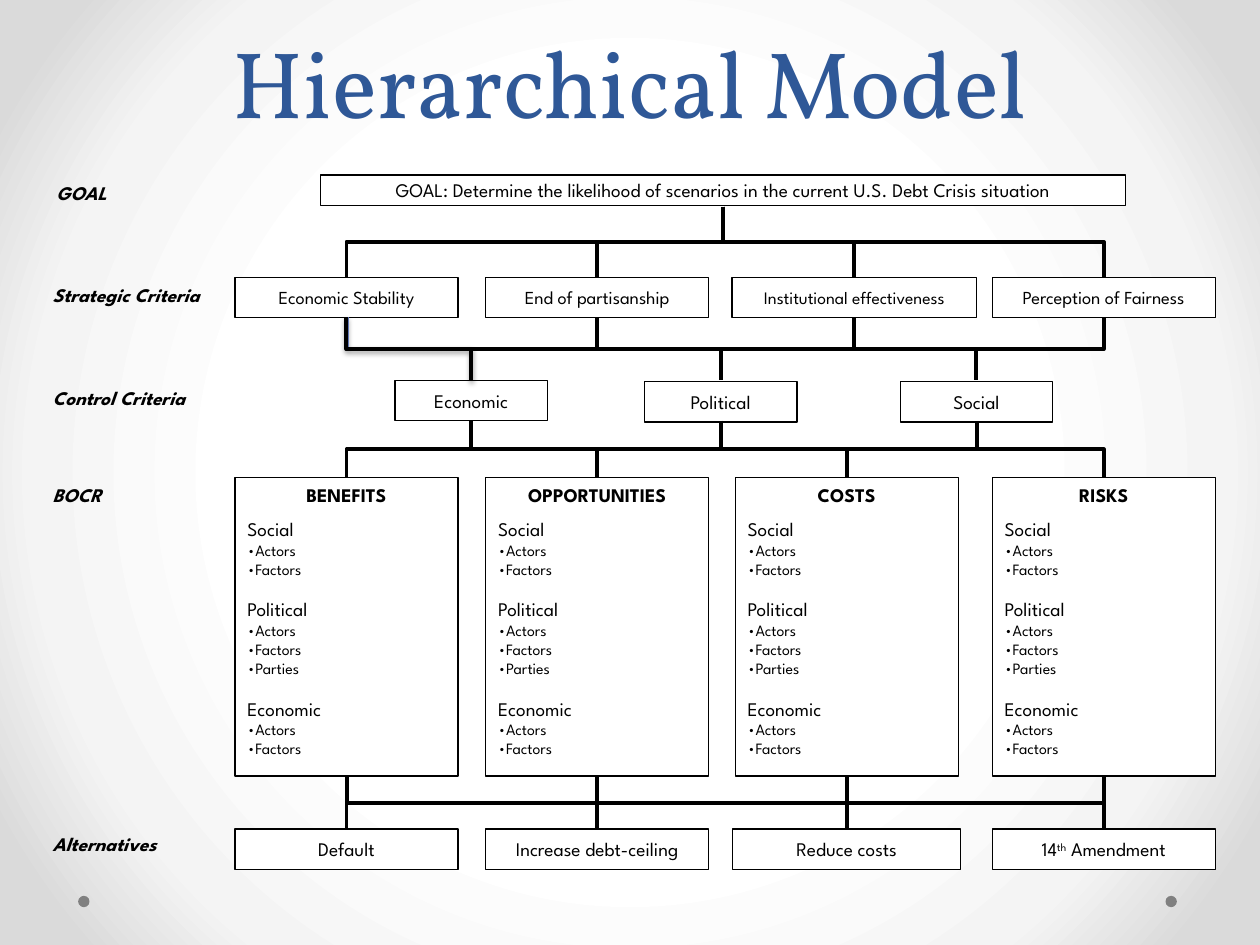
from pptx import Presentation
from pptx.dml.color import RGBColor
from pptx.enum.shapes import MSO_CONNECTOR, MSO_SHAPE
from pptx.enum.text import MSO_ANCHOR, PP_ALIGN
from pptx.oxml import parse_xml
from pptx.oxml.ns import nsdecls
from pptx.util import Inches, Pt

RECTANGLE, OVAL = MSO_SHAPE.RECTANGLE, MSO_SHAPE.OVAL
ELBOW = MSO_CONNECTOR.ELBOW
LEFT, CENTER = PP_ALIGN.LEFT, PP_ALIGN.CENTER
TOP, MIDDLE, BOTTOM = MSO_ANCHOR.TOP, MSO_ANCHOR.MIDDLE, MSO_ANCHOR.BOTTOM

BLACK = RGBColor(0x00, 0x00, 0x00)
WHITE = RGBColor(0xFF, 0xFF, 0xFF)
GRAY = RGBColor(0x80, 0x80, 0x80)
TITLE_BLUE = RGBColor(0x2F, 0x58, 0x97)
LINK_BLUE = RGBColor(0x60, 0x76, 0xB4)
BACKGROUND_STOPS = [(50, WHITE), (76, RGBColor(0xF4, 0xF4, 0xF4)),
                    (92, RGBColor(0xDA, 0xDA, 0xDA))]

COLUMNS, ROWS = 100, 75
BOX_WIDTH, BOX_HEIGHT = 17.7, 3.2
CONTROL_WIDTH = 12.1
BRANCHES = [27.5, 47.4, 67.2, 87.6]
STRATEGIC_CENTERS = [27.5, 47.4, 67.8, 87.6]
CONTROL_CENTERS = [37.4, 57.2, 77.5]
GOAL_CENTER = 57.4

LEVELS = [("GOAL", 3.5, 13.9), ("Strategic Criteria", 3.2, 22),
          ("Control Criteria", 3.2, 30.2), ("BOCR", 3.2, 37.9),
          ("Alternatives", 3.2, 65.6)]
STRATEGIC = [("Economic Stability", BOX_WIDTH, 10.5),
             ("End of partisanship", BOX_WIDTH, 10.5),
             ("Institutional effectiveness", 19.4, 10),
             ("Perception of Fairness", BOX_WIDTH, 10.5)]
CONTROL = [("Economic", 30.2), ("Political", 30.3), ("Social", 30.3)]
MERITS = ["BENEFITS", "OPPORTUNITIES", "COSTS", "RISKS"]
MERIT_TOPICS = [("Social", ["Actors", "Factors"]),
                ("Political", ["Actors", "Factors", "Parties"]),
                ("Economic", ["Actors", "Factors"])]
ALTERNATIVES = [("Default", BOX_WIDTH), ("Increase debt-ceiling", BOX_WIDTH),
                ("Reduce costs", 18.1), ("", BOX_WIDTH)]

STRATEGIC_TO_CONTROL = [(0, 2), (3, 1), (1, 0), (2, 1)]
CONTROL_TO_MERIT = [(0, 0), (1, 1), (2, 3), (2, 2), (1, 2), (0, 1)]
MERIT_TO_ALTERNATIVE = [(3, 3), (2, 3), (1, 2), (0, 1), (0, 0)]


def write(paragraph, text, size=11, font="League Spartan", color=BLACK,
          bold=False, italic=False, align=LEFT, before=0, after=0, raised=False):
    """Append one formatted run and set the spacing of its paragraph."""
    paragraph.alignment = align
    paragraph.space_before, paragraph.space_after = Pt(before), Pt(after)
    run = paragraph.add_run()
    run.text = text
    run.font.size, run.font.name = Pt(size), font
    run.font.bold, run.font.italic = bold, italic
    run.font.color.rgb = color
    if raised:
        run.font._element.set("baseline", "30000")


class Diagram:
    """Draws on one slide, in cells of a COLUMNS by ROWS grid."""

    def __init__(self, presentation):
        self.slide = presentation.slides.add_slide(presentation.slide_layouts[6])
        self.cell_width = presentation.slide_width / COLUMNS
        self.cell_height = presentation.slide_height / ROWS

    def place(self, left, top, width, height):
        return (round(left * self.cell_width), round(top * self.cell_height),
                round(width * self.cell_width), round(height * self.cell_height))

    def background(self, stops):
        self.slide.background.fill.solid()
        properties = self.slide._element.cSld.get_or_add_bgPr()
        colors = "".join(f'<a:gs pos="{share * 1000}"><a:srgbClr val="{color}"/></a:gs>'
                         for share, color in stops)
        properties.replace(properties[0], parse_xml(
            f'<a:gradFill {nsdecls("a")} rotWithShape="1"><a:gsLst>{colors}</a:gsLst>'
            '<a:path path="circle"><a:fillToRect l="50000" t="50000" r="50000" '
            'b="50000"/></a:path></a:gradFill>'))

    def label(self, text, left, top, width, height, anchor=TOP, **style):
        frame = self.slide.shapes.add_textbox(*self.place(left, top, width, height)).text_frame
        frame.word_wrap, frame.vertical_anchor = True, anchor
        write(frame.paragraphs[0], text, **style)
        return frame.paragraphs[0]

    def dot(self, left, top, size):
        dot = self.slide.shapes.add_shape(OVAL, *self.place(left, top, size, size))
        dot.shadow.inherit = False
        dot.fill.solid()
        dot.fill.fore_color.rgb = GRAY
        dot.line.fill.background()

    def box(self, center, top, width, height=BOX_HEIGHT, anchor=MIDDLE):
        """Draw a white box and return its text frame."""
        box = self.slide.shapes.add_shape(
            RECTANGLE, *self.place(center - width / 2, top, width, height))
        box.shadow.inherit = False
        box.fill.solid()
        box.fill.fore_color.rgb = WHITE
        box.line.color.rgb, box.line.width = BLACK, Pt(0.75)
        box.text_frame.word_wrap, box.text_frame.vertical_anchor = True, anchor
        return box.text_frame

    def caption_box(self, text, center, top, width, height=BOX_HEIGHT, size=11):
        caption = self.box(center, top, width, height).paragraphs[0]
        if text:
            write(caption, text, size=size, align=CENTER)
        return caption

    def merit_box(self, heading, center):
        frame = self.box(center, 37.9, BOX_WIDTH, 23.7, TOP)
        write(frame.paragraphs[0], heading, bold=True, align=CENTER, after=6)
        for index, (topic, items) in enumerate(MERIT_TOPICS):
            write(frame.add_paragraph(), topic, before=11 if index else 0)
            for item in items:
                write(frame.add_paragraph(), "•" + item, size=9)

    def link(self, upper, top, lower, bottom, color=BLACK, shadow=""):
        """Join two points by an elbow that leaves and arrives vertically."""
        middle_x = (upper + lower) / 2 * self.cell_width
        middle_y = (top + bottom) / 2 * self.cell_height
        half_run = (bottom - top) / 2 * self.cell_height
        half_rise = abs(upper - lower) / 2 * self.cell_width
        if lower > upper:
            half_run, turn = -half_run, 270
        else:
            turn = 90
        link = self.slide.shapes.add_connector(
            ELBOW, round(middle_x - half_run), round(middle_y - half_rise),
            round(middle_x + half_run), round(middle_y + half_rise))
        link.rotation = turn
        link.line.color.rgb, link.line.width = color, Pt(2.25)
        link._element.spPr.append(parse_xml(
            f'<a:effectLst {nsdecls("a")}>{shadow}</a:effectLst>'))

    def links(self, pairs, uppers, top, lowers, bottom):
        for upper, lower in pairs:
            self.link(uppers[upper], top, lowers[lower], bottom)


def main():
    presentation = Presentation()
    presentation.slide_width, presentation.slide_height = Inches(10), Inches(7.5)
    diagram = Diagram(presentation)
    diagram.background(BACKGROUND_STOPS)
    for left in (92.5, 6.2):
        diagram.dot(left, 71.1, 0.9)

    title = diagram.label("Hierarchical Model", 5, 0, 90, 11.4, BOTTOM, size=54,
                          font="Vollkorn", color=TITLE_BLUE, align=CENTER)
    title.line_spacing = Pt(58)
    for level, left, top in LEVELS:
        diagram.label(level, left, top, 14.3, 2.7, bold=True, italic=True)

    diagram.caption_box("GOAL: Determine the likelihood of scenarios in the current "
                        "U.S. Debt Crisis situation", GOAL_CENTER, 13.9, 63.9, 2.4)
    for (criterion, width, size), center in zip(STRATEGIC, STRATEGIC_CENTERS):
        diagram.caption_box(criterion, center, 22, width, size=size)
        diagram.link(GOAL_CENTER, 16.4, center, 22)
    for (criterion, top), center in zip(CONTROL, CONTROL_CENTERS):
        diagram.caption_box(criterion, center, top, CONTROL_WIDTH)
    for merit, center in zip(MERITS, BRANCHES):
        diagram.merit_box(merit, center)
    for (alternative, width), center in zip(ALTERNATIVES, BRANCHES):
        caption = diagram.caption_box(alternative, center, 65.8, width)
    for part, raised in (("14", False), ("th", True), (" Amendment", False)):
        write(caption, part, align=CENTER, raised=raised)

    diagram.link(STRATEGIC_CENTERS[0], 25.2, CONTROL_CENTERS[0], 30.2, LINK_BLUE,
                 '<a:outerShdw blurRad="39370" dist="20320" dir="5400000" rotWithShape="0">'
                 '<a:srgbClr val="000000"><a:alpha val="38000"/></a:srgbClr></a:outerShdw>')
    diagram.links(STRATEGIC_TO_CONTROL, STRATEGIC_CENTERS, 25.2, CONTROL_CENTERS, 30.2)
    diagram.links(CONTROL_TO_MERIT, CONTROL_CENTERS, 33.4, BRANCHES, 37.9)
    diagram.links(MERIT_TO_ALTERNATIVE, BRANCHES, 61.6, BRANCHES, 65.8)
    presentation.save("out.pptx")


if __name__ == "__main__":
    main()
